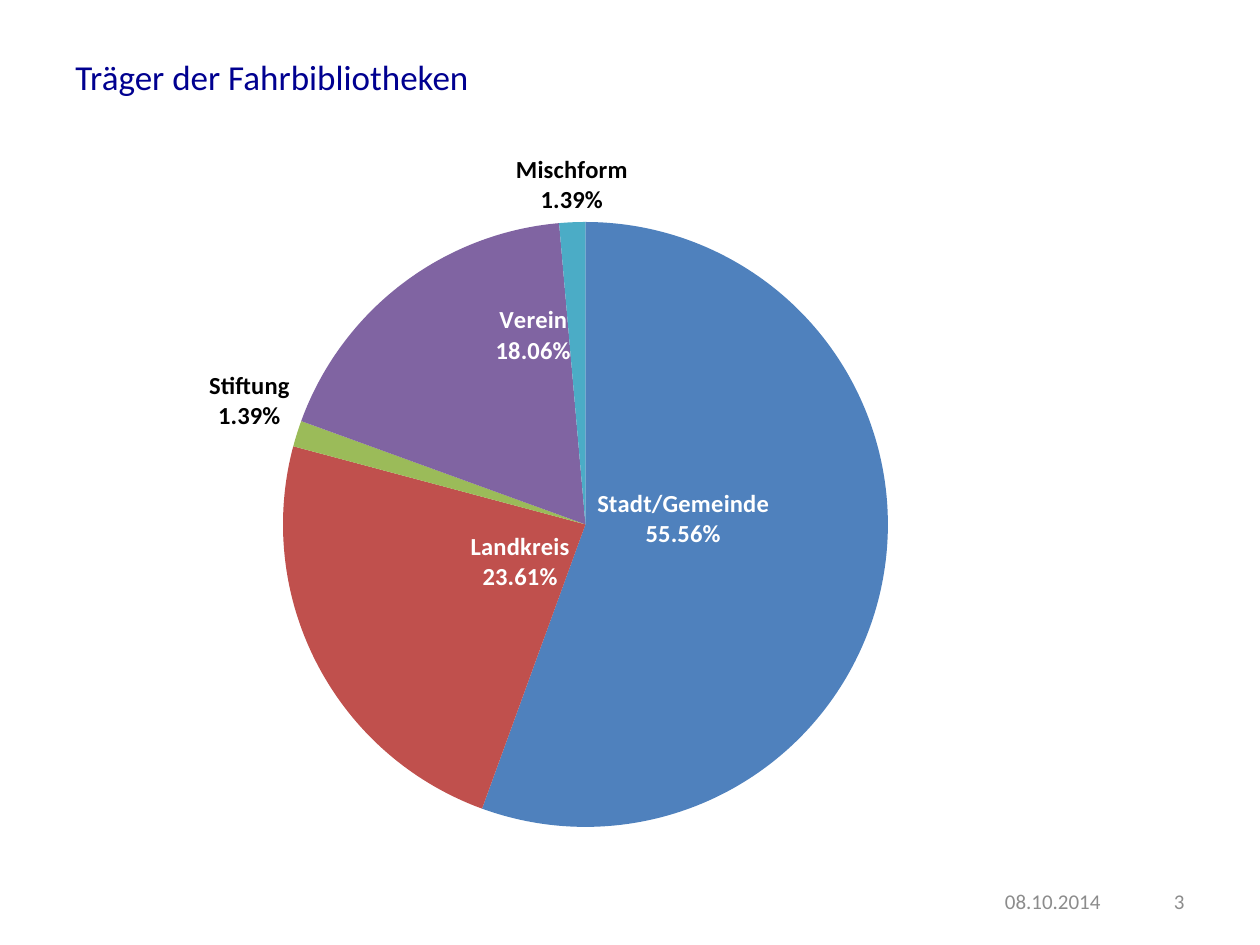
from lxml.etree import SubElement
from pptx import Presentation
from pptx.chart.data import CategoryChartData
from pptx.dml.color import RGBColor
from pptx.enum.chart import XL_CHART_TYPE as ChartType, XL_LABEL_POSITION as LabelPos
from pptx.enum.text import MSO_ANCHOR as Anchor, PP_ALIGN as Align
from pptx.oxml import parse_xml
from pptx.oxml.ns import nsdecls, qn
from pptx.util import Pt

EMU_PER_PX = 914400 / 126
FONT = "Calibri"


def px(length):
    return round(length * EMU_PER_PX)


def color(hex_value):
    return RGBColor.from_string(hex_value)


def layout_xml(**values):
    parts = "".join(f'<c:{name} val="{value}"/>' for name, value in values.items())
    return parse_xml(
        f'<c:layout {nsdecls("c")}><c:manualLayout>{parts}</c:manualLayout></c:layout>'
    )


class SlideBuilder:
    def __init__(self, slide):
        self.slide = slide

    def style(self, font, size, hex_value, bold=False):
        for name, value in {"name": FONT, "size": Pt(size), "bold": bold}.items():
            setattr(font, name, value)
        font.color.rgb = color(hex_value)

    def text(self, wording, box, size, hex_value, align=Align.LEFT):
        frame = self.slide.shapes.add_textbox(*map(px, box)).text_frame
        for name, value in {"word_wrap": True, "vertical_anchor": Anchor.MIDDLE}.items():
            setattr(frame, name, value)
        line = frame.paragraphs[0]
        line.text = wording
        line.alignment = align
        self.style(line.font, size, hex_value)

    def pie(self, box, plot, sectors):
        left, top, width, height = box
        data = CategoryChartData(number_format='0.00"%"')
        data.categories = [sector[0] for sector in sectors]
        data.add_series("Series 1", [sector[1] for sector in sectors])
        chart = self.slide.shapes.add_chart(ChartType.PIE, *map(px, box), data).chart
        chart.has_title = False
        chart.has_legend = False
        self.style(chart.font, 10, "000000")

        plot_area = chart._chartSpace.chart.plotArea
        for old_layout in plot_area.findall(qn("c:layout")):
            plot_area.remove(old_layout)
        plot_area.insert(0, layout_xml(
            layoutTarget="inner", xMode="edge", yMode="edge",
            x=round((plot[0] - left) / width, 4),
            y=round((plot[1] - top) / height, 4),
            w=round(plot[2] / width, 4),
            h=round(plot[3] / height, 4),
        ))

        series = chart.plots[0].series[0]
        for index, (_, _, fill, ink, shift) in enumerate(sectors):
            point = series.points[index]
            point.format.fill.solid()
            point.format.fill.fore_color.rgb = color(fill)
            label = point.data_label
            self.style(label.font, 14, ink, bold=True)
            label.position = LabelPos.CENTER if shift else LabelPos.OUTSIDE_END
            self.finish_label(series, index, shift, width, height)

    def finish_label(self, series, index, shift, width, height):
        label = series._element.findall(f'{qn("c:dLbls")}/{qn("c:dLbl")}')[index]
        label.find(qn("c:showCatName")).set("val", "1")
        label.find(qn("c:showVal")).set("val", "1")
        label.insert(1, parse_xml(
            f"<c:numFmt {nsdecls('c')} formatCode='0.00\"%\"' sourceLinked=\"0\"/>"
        ))
        if shift:
            label.insert(1, layout_xml(
                x=round(shift[0] / width, 4), y=round(shift[1] / height, 4)
            ))
        SubElement(label, qn("c:separator")).text = "\n"


def main():
    deck = Presentation()
    deck.slide_width, deck.slide_height = px(1260), px(945)
    builder = SlideBuilder(deck.slides.add_slide(deck.slide_layouts[6]))
    builder.text("Träger der Fahrbibliotheken", (63, 38, 1134, 78), 20, "000090")
    builder.text("08.10.2014", (819, 876, 294, 50), 12, "8C8C8C", Align.RIGHT)
    builder.text("3", (1061, 876, 136, 50), 12, "8C8C8C", Align.RIGHT)
    sectors = [
        ("Stadt/Gemeinde", 55.56, "4F81BD", "FFFFFF", (-51, -32)),
        ("Landkreis", 23.61, "C0504D", "FFFFFF", (69, -32)),
        ("Stiftung", 1.39, "9BBB59", "000000", None),
        ("Verein", 18.06, "8064A2", "FFFFFF", (40, -69)),
        ("Mischform", 1.39, "4BACC6", "000000", None),
    ]
    builder.pie((63, 136, 1134, 708), (283, 222, 605, 605), sectors)
    deck.save("out.pptx")


if __name__ == "__main__":
    main()
